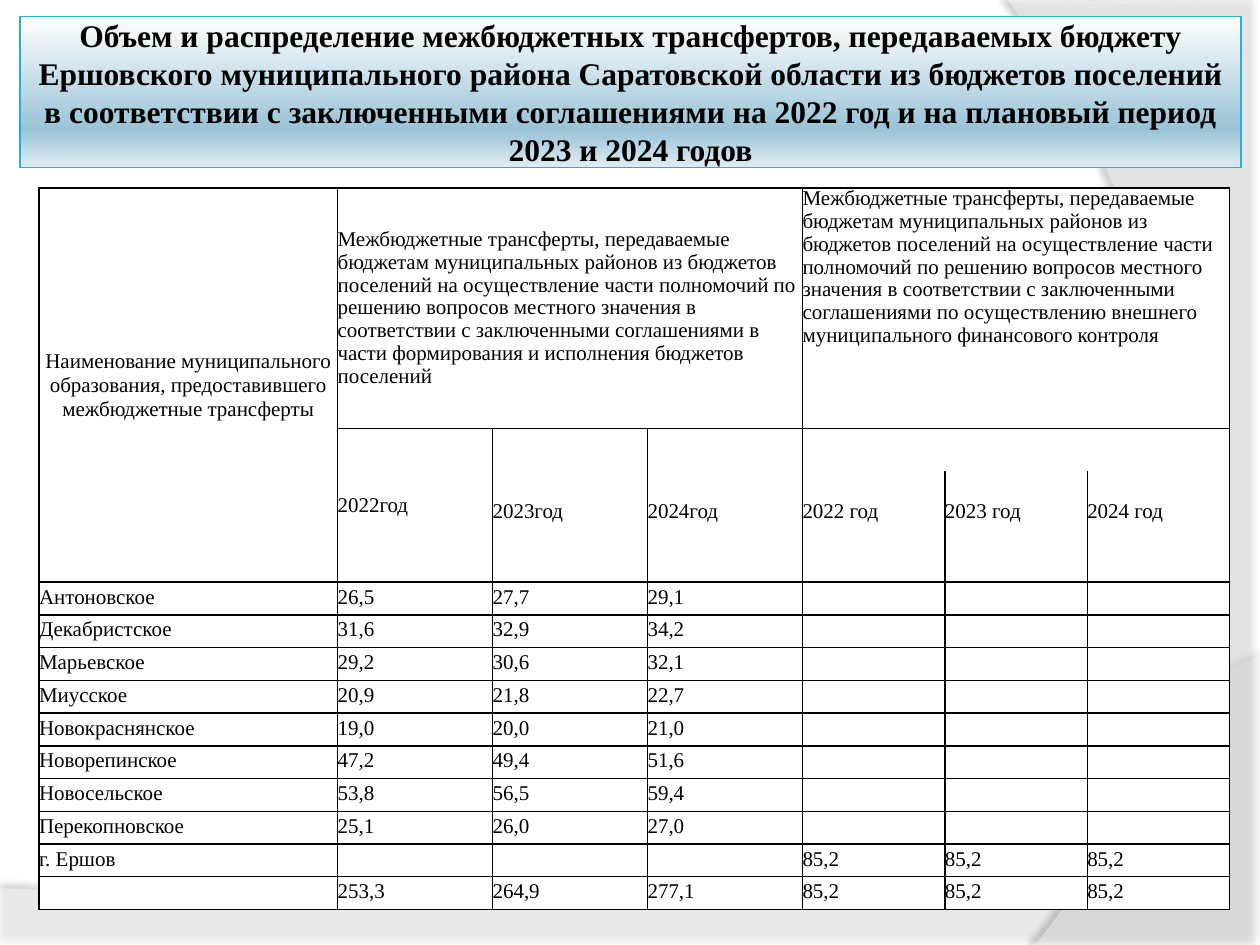
from copy import deepcopy

from lxml.etree import SubElement
from pptx import Presentation
from pptx.dml.color import RGBColor as RGB
from pptx.enum.text import MSO_ANCHOR as ANCHOR, MSO_AUTO_SIZE as AUTO, PP_ALIGN as ALIGN
from pptx.oxml import parse_xml
from pptx.oxml.ns import nsdecls, qn
from pptx.util import Inches, Pt

C = {"ink": "000000", "paper": "FFFFFF", "edge": "1FB1D6",
     "deep": "9AC3D6", "pale": "E0ECF2"}
FONT = "Times New Roman"

prs = Presentation()
prs.slide_width, prs.slide_height = Inches(10), Inches(7.5)
s = prs.slides.add_slide(prs.slide_layouts[5])
title = s.shapes.title


def add_run(p, text, size, bold=False):
    r = p.add_run()
    r.text = text
    r.font.name, r.font.size, r.font.bold = FONT, Pt(size), bold
    r.font.color.rgb = RGB.from_string(C["ink"])


def bezier(p0, p1, p2, p3, n=40):
    ts = [i / n for i in range(n + 1)]
    return [tuple((1 - t) ** 3 * a + 3 * (1 - t) ** 2 * t * b + 3 * (1 - t) * t ** 2 * c + t ** 3 * d
                  for a, b, c, d in zip(p0, p1, p2, p3)) for t in ts]


# Background waves, behind the title: points, opacity, shadow opacity, distance, direction
waves = [
    ([(0, 7.05), (0, 7.51), (10, 7.51)]
     + bezier((10, 5.2), (5.59, 7.29), (3.91, 7.19), (0, 7.05)), 45, 35, 3.5, 270),
    ([(10, 0.02), (10, 7.5)]
     + bezier((8.21, 7.5), (9.35, 6.19), (10.18, 3), (8, 0)), 40, 45, 4, 180),
]
for points, opacity, shade, dist, angle in waves:
    points = [(Inches(x), Inches(y)) for x, y in points]
    fb = s.shapes.build_freeform(*points[0])
    fb.add_line_segments(points[1:], close=True)
    sp = fb.convert_to_shape()
    sp.fill.solid()
    sp.fill.fore_color.rgb = RGB.from_string(C["paper"])
    sp.line.fill.background()
    spPr = sp._element.spPr
    SubElement(spPr.find(".//" + qn("a:srgbClr")), qn("a:alpha"), val=str(opacity * 1000))
    spPr.append(parse_xml(
        f'<a:effectLst {nsdecls("a")}><a:outerShdw blurRad="{Pt(4)}" dist="{Pt(dist)}" '
        f'dir="{angle * 60000}" algn="ctr" rotWithShape="0"><a:srgbClr val="{C["ink"]}">'
        f'<a:alpha val="{shade * 1000}"/></a:srgbClr></a:outerShdw></a:effectLst>'))
    title._element.addprevious(sp._element)

# Title on a gradient band
title.left, title.top, title.width, title.height = map(Inches, (0.16, 0.13, 9.69, 1.2))
title.fill.gradient()
title.fill.gradient_angle = 270
first = title._element.spPr.find(".//" + qn("a:gs"))
first.addnext(deepcopy(first))
for stop, (pos, color) in zip(title.fill.gradient_stops,
                              [(0, "paper"), (0.75, "deep"), (1, "pale")]):
    stop.position = pos
    stop.color.rgb = RGB.from_string(C[color])
title.line.color.rgb = RGB.from_string(C["edge"])
title.line.width = Pt(0.75)
tf = title.text_frame
tf.word_wrap, tf.auto_size, tf.vertical_anchor = True, AUTO.NONE, ANCHOR.MIDDLE
tf.margin_left = tf.margin_right = tf.margin_top = tf.margin_bottom = Inches(0.05)
p = tf.paragraphs[0]
p.alignment = ALIGN.CENTER
add_run(p, "Объем и распределение межбюджетных трансфертов, передаваемых бюджету "
           "Ершовского муниципального района Саратовской области из бюджетов поселений "
           "в соответствии с заключенными соглашениями на 2022 год и на плановый период "
           "2023 и 2024 годов", 18, True)

# Table contents
control = ["85,2"] * 3
blank = [""] * 3
transfer = ("Межбюджетные трансферты, передаваемые бюджетам муниципальных районов из бюджетов "
            "поселений на осуществление части полномочий по решению вопросов местного значения "
            "в соответствии с заключенными соглашениями ")
rows = [
    ["Наименование муниципального образования, предоставившего межбюджетные трансферты",
     transfer + "в части формирования и исполнения бюджетов поселений", "", "",
     transfer + "по осуществлению внешнего муниципального финансового контроля", "", ""],
    ["", "2022год", "", "", *blank],
    ["", "", "2023год", "2024год", "2022 год", "2023 год", "2024 год"],
    ["Антоновское", "26,5", "27,7", "29,1", *blank],
    ["Декабристское", "31,6", "32,9", "34,2", *blank],
    ["Марьевское", "29,2", "30,6", "32,1", *blank],
    ["Миусское", "20,9", "21,8", "22,7", *blank],
    ["Новокраснянское", "19,0", "20,0", "21,0", *blank],
    ["Новорепинское", "47,2", "49,4", "51,6", *blank],
    ["Новосельское", "53,8", "56,5", "59,4", *blank],
    ["Перекопновское", "25,1", "26,0", "27,0", *blank],
    ["г. Ершов", *blank, *control],
    ["", "253,3", "264,9", "277,1", *control],
]
widths = [2.37] + [1.23] * 3 + [1.13] * 3
heights = [1.91, 0.34, 0.88] + [0.26] * 10
spans = [(0, 0, 2, 0), (0, 1, 0, 3), (0, 4, 0, 6), (1, 1, 2, 1), (1, 4, 1, 6)]
exact = {(0, 0): 13.7, (0, 1): 13, (0, 4): 13, (1, 1): 13}

frame = s.shapes.add_table(len(rows), len(widths), Inches(0.31), Inches(1.49),
                           Inches(sum(widths)), Inches(sum(heights)))
table = frame.table
table.first_row = table.horz_banding = False
for col, width in zip(table.columns, widths):
    col.width = Inches(width)
for row, height in zip(table.rows, heights):
    row.height = Inches(height)
for r1, c1, r2, c2 in spans:
    table.cell(r1, c1).merge(table.cell(r2, c2))

# Cell text, fill and borders
for i, row in enumerate(rows):
    for j, text in enumerate(row):
        cell = table.cell(i, j)
        cell.margin_left = cell.margin_right = cell.margin_top = cell.margin_bottom = 0
        cell.fill.solid()
        cell.fill.fore_color.rgb = RGB.from_string(C["paper"])
        p = cell.text_frame.paragraphs[0]
        p.line_spacing = Pt(exact[i, j]) if (i, j) in exact else 1.15
        if (i, j) in exact and (i, j) != (0, 4):
            cell.vertical_anchor = ANCHOR.MIDDLE
        if (i, j) == (0, 0):
            p.alignment = ALIGN.CENTER
        if i == 2 and text:
            cell.margin_top = Inches(0.2)
        if text:
            add_run(p, text, 12)
        else:
            SubElement(p._p, qn("a:endParaRPr"), sz="1200")

        # The year cells are open between the second and third rows
        sides = "LRTB"
        if j >= 2 and i in (1, 2):
            sides = "LRB" if i == 2 else "LRT"
        tcPr = cell._tc.get_or_add_tcPr()
        for k, side in enumerate("LRTB"):
            paint = (f'<a:solidFill><a:srgbClr val="{C["ink"]}"/></a:solidFill>'
                     if side in sides else "<a:noFill/>")
            tcPr.insert(k, parse_xml(
                f'<a:ln{side} {nsdecls("a")} w="{Pt(1)}">{paint}</a:ln{side}>'))

prs.save("out.pptx")
